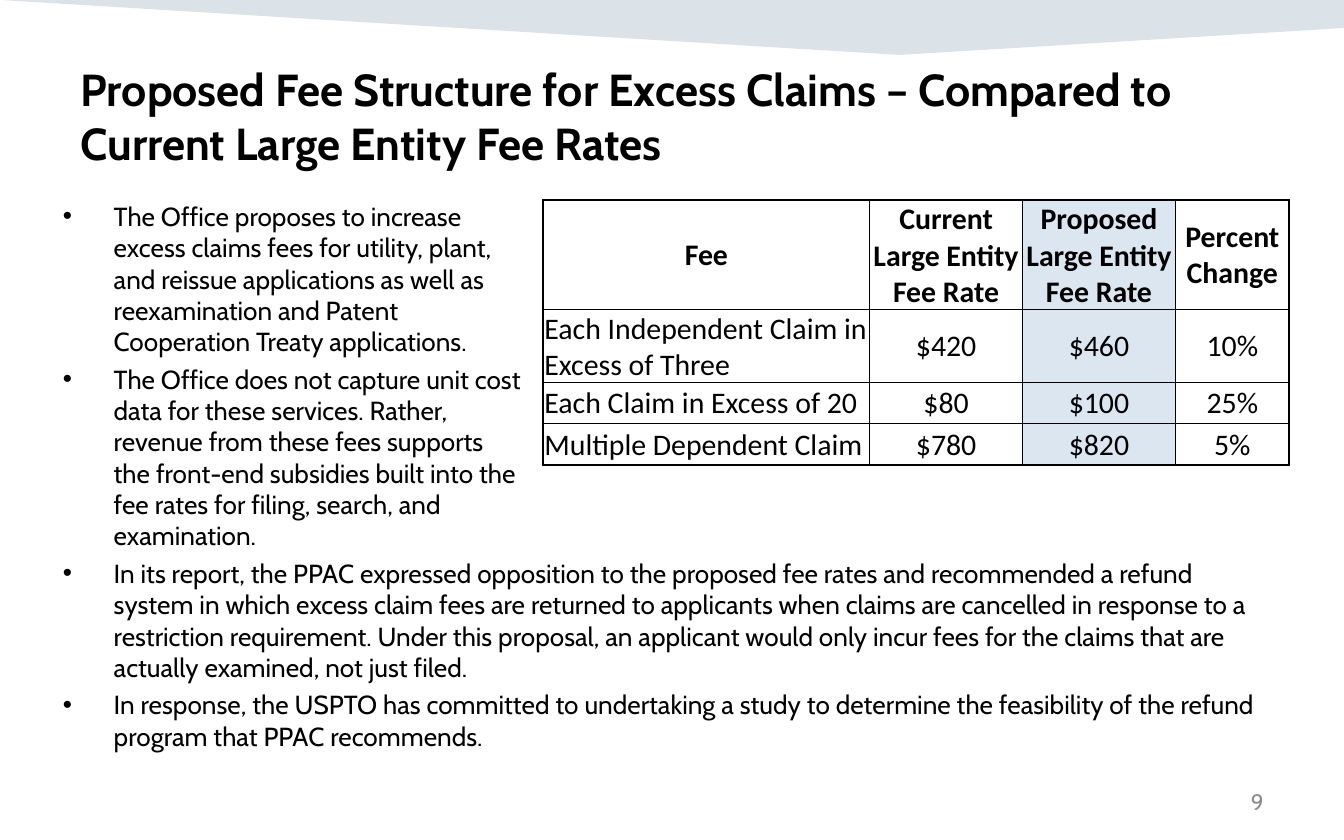
from lxml.etree import SubElement
from pptx import Presentation
from pptx.dml.color import RGBColor
from pptx.enum.text import MSO_ANCHOR, MSO_AUTO_SIZE, PP_ALIGN
from pptx.oxml import parse_xml
from pptx.oxml.ns import nsdecls, qn
from pptx.util import Cm, Pt

COLORS = {"text": "000000", "number": "8C8C8C", "banner": "164469",
          "proposed": "DCE6F1", "plain": "FFFFFF"}

TITLE = "Proposed Fee Structure for Excess Claims – Compared to Current Large Entity Fee Rates"
PAGE_NUMBER = "9"
BANNER_POINTS = [(0, 0), (25.4, 0), (25.4, 0.53), (17, 1.04)]

# Each block: left, top, width, height in cm, then its bullets
BULLET_BLOCKS = [
    ((0.94, 3.66, 9.25, 6.76), [
        "The Office proposes to increase excess claims fees for utility, plant, and reissue "
        "applications as well as reexamination and Patent Cooperation Treaty applications.",
        "The Office does not capture unit cost data for these services. Rather, revenue from "
        "these fees supports the front-end subsidies built into the fee rates for filing, "
        "search, and examination.",
    ]),
    ((0.94, 10.41, 23.42, 3.96), [
        "In its report, the PPAC expressed opposition to the proposed fee rates and recommended "
        "a refund system in which excess claim fees are returned to applicants when claims are "
        "cancelled in response to a restriction requirement. Under this proposal, an applicant "
        "would only incur fees for the claims that are actually examined, not just filed.",
        "In response, the USPTO has committed to undertaking a study to determine the "
        "feasibility of the refund program that PPAC recommends.",
    ]),
]

FEES = [
    ("Fee", "Current Large Entity Fee Rate", "Proposed Large Entity Fee Rate", "Percent Change"),
    ("Each Independent Claim in Excess of Three", "$420", "$460", "10%"),
    ("Each Claim in Excess of 20", "$80", "$100", "25%"),
    ("Multiple Dependent Claim", "$780", "$820", "5%"),
]
COLUMN_WIDTHS = [6.18, 2.88, 2.9, 2.14]
ROW_HEIGHTS = [2.06, 1.37, 0.78, 0.78]
PROPOSED_COLUMN = 2

BODY = {"name": "Cabin", "size": Pt(14), "bold": False}
HEADING = {"name": "Cabin", "size": Pt(24), "bold": True}
NUMBER = {"name": "Cabin", "size": Pt(12), "bold": False}
CELL = {"name": "Calibri", "size": Pt(16), "bold": False}


def set_attributes(target, values):
    for name, value in values.items():
        setattr(target, name, value)


def write(paragraph, text, font, color="text", align=PP_ALIGN.LEFT):
    paragraph.alignment = align
    run = paragraph.add_run()
    run.text = text
    set_attributes(run.font, font)
    run.font.color.rgb = RGBColor.from_string(COLORS[color])


def place(shape, left, top, width, height):
    set_attributes(shape, {"left": Cm(left), "top": Cm(top),
                           "width": Cm(width), "height": Cm(height)})


def add_text_box(slide, box):
    frame = slide.shapes.add_textbox(*map(Cm, box)).text_frame
    frame.word_wrap = True
    return frame


def add_banner(slide):
    builder = slide.shapes.build_freeform(0, 0, scale=Cm(1) / 100)
    builder.add_line_segments([(x * 100, y * 100) for x, y in BANNER_POINTS[1:]])
    banner = builder.convert_to_shape()
    banner.shadow.inherit = False
    banner.line.fill.background()
    banner.fill.solid()
    banner.fill.fore_color.rgb = RGBColor.from_string(COLORS["banner"])
    color = banner.fill._xPr.find(qn("a:solidFill"))[0]
    SubElement(color, qn("a:alpha"), val="15000")


def add_title(slide):
    title = slide.shapes.title
    place(title, 1.27, 1.04, 22.86, 2.24)
    set_attributes(title.text_frame, {"word_wrap": True, "auto_size": MSO_AUTO_SIZE.NONE,
                                      "vertical_anchor": MSO_ANCHOR.TOP})
    write(title.text_frame.paragraphs[0], TITLE, HEADING)


def add_bullets(slide, box, bullets):
    frame = add_text_box(slide, box)
    for index, text in enumerate(bullets):
        paragraph = frame.add_paragraph() if index else frame.paragraphs[0]
        write(paragraph, text, BODY)
        paragraph.space_before = Pt(3.2)
        properties = paragraph._p.get_or_add_pPr()
        properties.set("marL", str(Cm(0.96)))
        properties.set("indent", str(-Cm(0.96)))
        SubElement(properties, qn("a:buFont"), typeface="Arial")
        SubElement(properties, qn("a:buChar"), char="•")


def set_borders(cell, outer_sides):
    """Draw 1 pt lines on the outer sides of the table and 0.5 pt lines elsewhere."""
    properties = cell._tc.get_or_add_tcPr()
    for index, side in enumerate("LRTB"):
        width = Pt(1) if side in outer_sides else Pt(0.5)
        properties.insert(index, parse_xml(
            f'<a:ln{side} {nsdecls("a")} w="{width}"><a:solidFill>'
            f'<a:srgbClr val="{COLORS["text"]}"/></a:solidFill></a:ln{side}>'))


def add_fee_table(slide):
    last_row, last_column = len(FEES) - 1, len(COLUMN_WIDTHS) - 1
    table = slide.shapes.add_table(
        len(FEES), len(COLUMN_WIDTHS), Cm(10.26), Cm(3.78),
        Cm(sum(COLUMN_WIDTHS)), Cm(sum(ROW_HEIGHTS))).table
    table.horz_banding = False
    for column, width in zip(table.columns, COLUMN_WIDTHS):
        column.width = Cm(width)
    for row, height in zip(table.rows, ROW_HEIGHTS):
        row.height = Cm(height)

    for r, values in enumerate(FEES):
        for c, text in enumerate(values):
            cell = table.cell(r, c)
            set_attributes(cell, {"margin_left": Cm(0.03), "margin_right": Cm(0.03),
                                  "margin_top": Cm(0.03), "margin_bottom": 0,
                                  "vertical_anchor": MSO_ANCHOR.MIDDLE})
            cell.fill.solid()
            fill = "proposed" if c == PROPOSED_COLUMN else "plain"
            cell.fill.fore_color.rgb = RGBColor.from_string(COLORS[fill])
            align = PP_ALIGN.LEFT if r and c == 0 else PP_ALIGN.CENTER
            write(cell.text_frame.paragraphs[0], text, {**CELL, "bold": r == 0}, align=align)
            edges = {"L": c == 0, "R": c == last_column, "T": r == 0, "B": r == last_row}
            set_borders(cell, [side for side, is_outer in edges.items() if is_outer])


def add_page_number(slide):
    frame = add_text_box(slide, (18.21, 14.73, 5.92, 0.84))
    frame.vertical_anchor = MSO_ANCHOR.MIDDLE
    write(frame.paragraphs[0], PAGE_NUMBER, NUMBER, "number", PP_ALIGN.RIGHT)


def main():
    presentation = Presentation()
    set_attributes(presentation, {"slide_width": Cm(25.4), "slide_height": Cm(15.88)})
    slide = presentation.slides.add_slide(presentation.slide_layouts.get_by_name("Title Only"))
    add_banner(slide)
    add_title(slide)
    add_page_number(slide)
    for box, bullets in BULLET_BLOCKS:
        add_bullets(slide, box, bullets)
    add_fee_table(slide)
    presentation.save("out.pptx")


if __name__ == "__main__":
    main()
